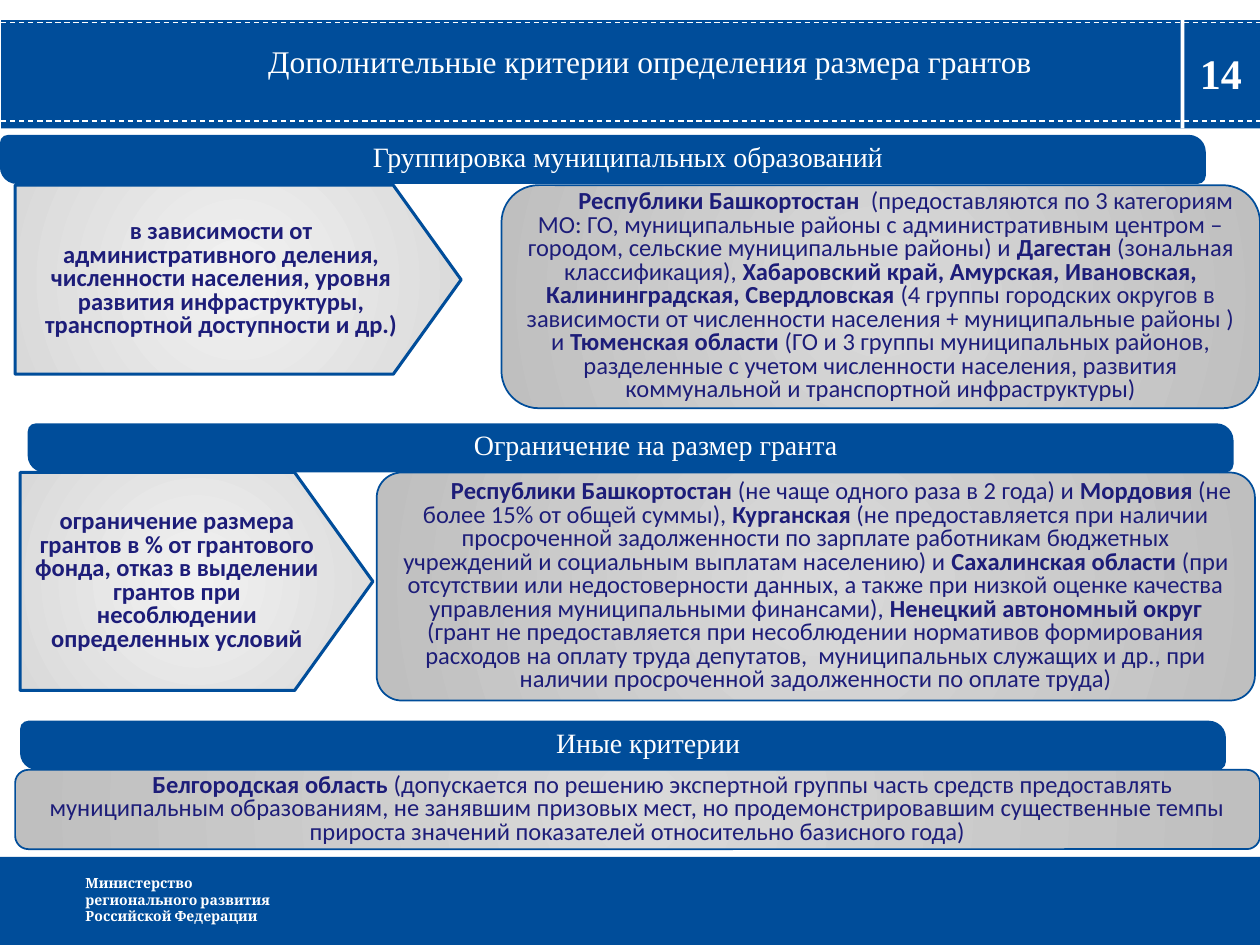
from lxml import etree
from pptx import Presentation
from pptx.dml.color import RGBColor
from pptx.enum import dml, shapes, text
from pptx.oxml import ns
from pptx.util import Inches, Pt

INK = {"blue": "004D9A", "white": "FFFFFF", "navy": "1D1D79",
       "pale": "F2F2F2", "light": "D9D9D9", "gray": "BFBFBF"}
KIND = shapes.MSO_SHAPE
SERIF, SANS = "Times New Roman", "Calibri"
HEAD_W, HEAD_H = 9.57, 0.39


def rgb(name):
    return RGBColor.from_string(INK[name])


def style(para, font, size, ink, bold=False):
    for run in para.runs:
        run.font.name, run.font.size = font, Pt(size)
        run.font.color.rgb = rgb(ink)
        if run.font.bold is None:
            run.font.bold = bold


def write(para, words, font, size, ink, indent=0.0):
    """Centred, tight text; parts between ** marks are bold."""
    props = para._p.get_or_add_pPr()
    props.set("marL", "0")
    props.set("indent", str(Inches(indent)))
    para.alignment = text.PP_ALIGN.CENTER
    para.line_spacing = 0.8
    for i, part in enumerate(words.split("**")):
        if part:
            run = para.add_run()
            run.text = part
            run.font.bold = i % 2 == 1
    style(para, font, size, ink)


def block(slide, kind, box, fill="blue", adj=()):
    shape = slide.shapes.add_shape(kind, *map(Inches, box))
    shape.shadow.inherit = False
    for i, value in enumerate(adj):
        shape.adjustments[i] = value
    shape.fill.solid()
    shape.fill.fore_color.rgb = rgb(fill)
    shape.line.fill.background()
    frame = shape.text_frame
    frame.word_wrap = True
    frame.vertical_anchor = text.MSO_ANCHOR.MIDDLE
    return shape


def glow(shape, inner, outer, width):
    """Gradient from the centre outwards, with a blue outline."""
    shape.fill.gradient()
    for stop, name in zip(shape.fill.gradient_stops, (inner, outer)):
        stop.color.rgb = rgb(name)
    grad = shape.element.spPr.find(ns.qn("a:gradFill"))
    grad.remove(grad.find(ns.qn("a:lin")))
    ring = etree.SubElement(grad, ns.qn("a:path"), {"path": "circle"})
    sides = {side: "50000" for side in "ltrb"}
    etree.SubElement(ring, ns.qn("a:fillToRect"), sides)
    shape.line.color.rgb = rgb("blue")
    shape.line.width = Pt(width)


def label(slide, box, lines, font, size, align):
    frame = slide.shapes.add_textbox(*map(Inches, box)).text_frame
    frame.word_wrap = True
    frame.text = "\n".join(lines)
    for para in frame.paragraphs:
        para.alignment = align
        style(para, font, size, "white", True)


def header(slide, box, title, number):
    x, y, w, h = box
    block(slide, KIND.RECTANGLE, box)
    # Dashed seams
    for seam in (y + 0.02, y + h - 0.06):
        line = slide.shapes.add_connector(
            shapes.MSO_CONNECTOR.STRAIGHT, Inches(x), Inches(seam),
            Inches(x + w), Inches(seam))
        line.line.color.rgb = rgb("white")
        line.line.width = Pt(0.75)
        line.line.dash_style = dml.MSO_LINE.DASH
        etree.SubElement(line.element.spPr, ns.qn("a:effectLst"))
    # Title, brought in front of the band
    head = slide.shapes.title
    slide.shapes.element.append(head.element)
    head.left, head.top = Inches(x + 0.97), Inches(y + 0.2)
    head.width, head.height = Inches(8.36), Inches(0.31)
    frame = head.text_frame
    frame.word_wrap = True
    frame.auto_size = text.MSO_AUTO_SIZE.NONE
    frame.vertical_anchor = text.MSO_ANCHOR.TOP
    frame.margin_left = frame.margin_right = Inches(0.06)
    frame.margin_top = frame.margin_bottom = Inches(0.03)
    write(frame.paragraphs[0], title, SERIF, 18, "white")
    # Page number
    block(slide, KIND.RECTANGLE, (x + 9.36, y - 0.01, 0.03, h + 0.01), "white")
    label(slide, (x + 9.37, y + 0.17, 0.62, 0.5), [number], SERIF, 24,
          text.PP_ALIGN.CENTER)


def footer(slide, box, lines):
    x, y, w, h = box
    block(slide, KIND.RECTANGLE, box)
    label(slide, (x + 0.59, y + 0.09, 2.55, 0.5), lines, "Cambria", 8,
          text.PP_ALIGN.LEFT)


def heading(slide, spot, words):
    bar = block(slide, KIND.ROUND_2_DIAG_RECTANGLE, (*spot, HEAD_W, HEAD_H),
                adj=(0.167, 0.344))
    write(bar.text_frame.paragraphs[0], words, SERIF, 16, "white", 0.4)


def arrow(slide, box, words):
    shape = block(slide, KIND.PENTAGON, box, adj=(0.359,))
    glow(shape, "pale", "light", 1.75)
    write(shape.text_frame.paragraphs[0], f"**{words}**", SANS, 14, "navy")


def panel(slide, box, words, round_by=0.167):
    shape = block(slide, KIND.ROUNDED_RECTANGLE, box, adj=(round_by,))
    glow(shape, "light", "gray", 1)
    write(shape.text_frame.paragraphs[0], words, SANS, 14, "navy", 0.4)


def main():
    deck = Presentation()
    deck.slide_width, deck.slide_height = Inches(10), Inches(7.5)
    slide = deck.slides.add_slide(deck.slide_layouts[5])

    header(slide, (0.01, 0.16, 9.99, 0.86),
           "Дополнительные критерии определения размера грантов", "14")
    footer(slide, (-0.01, 6.8, 10.02, 0.7),
           ["Министерство", "регионального развития", "Российской Федерации"])

    # Grouping of municipalities
    heading(slide, (0, 1.07), "Группировка муниципальных образований")
    arrow(slide, (0.12, 1.47, 3.54, 1.5),
          "в зависимости от административного деления, численности "
          "населения, уровня развития инфраструктуры, транспортной "
          "доступности и др.)")
    panel(slide, (3.98, 1.47, 6.02, 1.77),
          "**Республики Башкортостан  **(предоставляются по 3 категориям МО: "
          "ГО, муниципальные районы с административным центром – городом, "
          "сельские муниципальные районы) и **Дагестан** (зональная "
          "классификация), **Хабаровский край, Амурская, Ивановская, "
          "Калининградская, Свердловская **(4 группы городских округов в "
          "зависимости от численности населения + муниципальные районы ) и "
          "**Тюменская области **(ГО и 3 группы муниципальных районов, "
          "разделенные с учетом численности населения, развития "
          "коммунальной и транспортной инфраструктуры)")

    # Limits on the grant
    heading(slide, (0.22, 3.36), "Ограничение на размер гранта")
    arrow(slide, (0.16, 3.75, 2.8, 1.73),
          "ограничение размера грантов в % от грантового фонда, отказ в "
          "выделении грантов при несоблюдении определенных условий")
    panel(slide, (2.99, 3.75, 6.97, 1.81),
          "**Республики Башкортостан **(не чаще одного раза в 2 года) и "
          "**Мордовия** (не более 15% от общей суммы), **Курганская** (не "
          "предоставляется при наличии просроченной задолженности по "
          "зарплате работникам бюджетных учреждений и социальным выплатам "
          "населению) и **Сахалинская области **(при отсутствии или "
          "недостоверности данных, а также при низкой оценке качества "
          "управления муниципальными финансами), **Ненецкий автономный "
          "округ **(грант не предоставляется при несоблюдении нормативов "
          "формирования расходов на оплату труда депутатов,  муниципальных "
          "служащих и др., при наличии просроченной задолженности по оплате "
          "труда)", 0.11)

    # Other criteria
    heading(slide, (0.16, 5.72), "Иные критерии")
    panel(slide, (0.12, 6.11, 9.88, 0.63),
          "**Белгородская область **(допускается по решению экспертной "
          "группы часть средств предоставлять муниципальным образованиям, "
          "не занявшим призовых мест, но продемонстрировавшим существенные "
          "темпы прироста значений показателей относительно базисного года)")
    deck.save("out.pptx")


if __name__ == "__main__":
    main()
